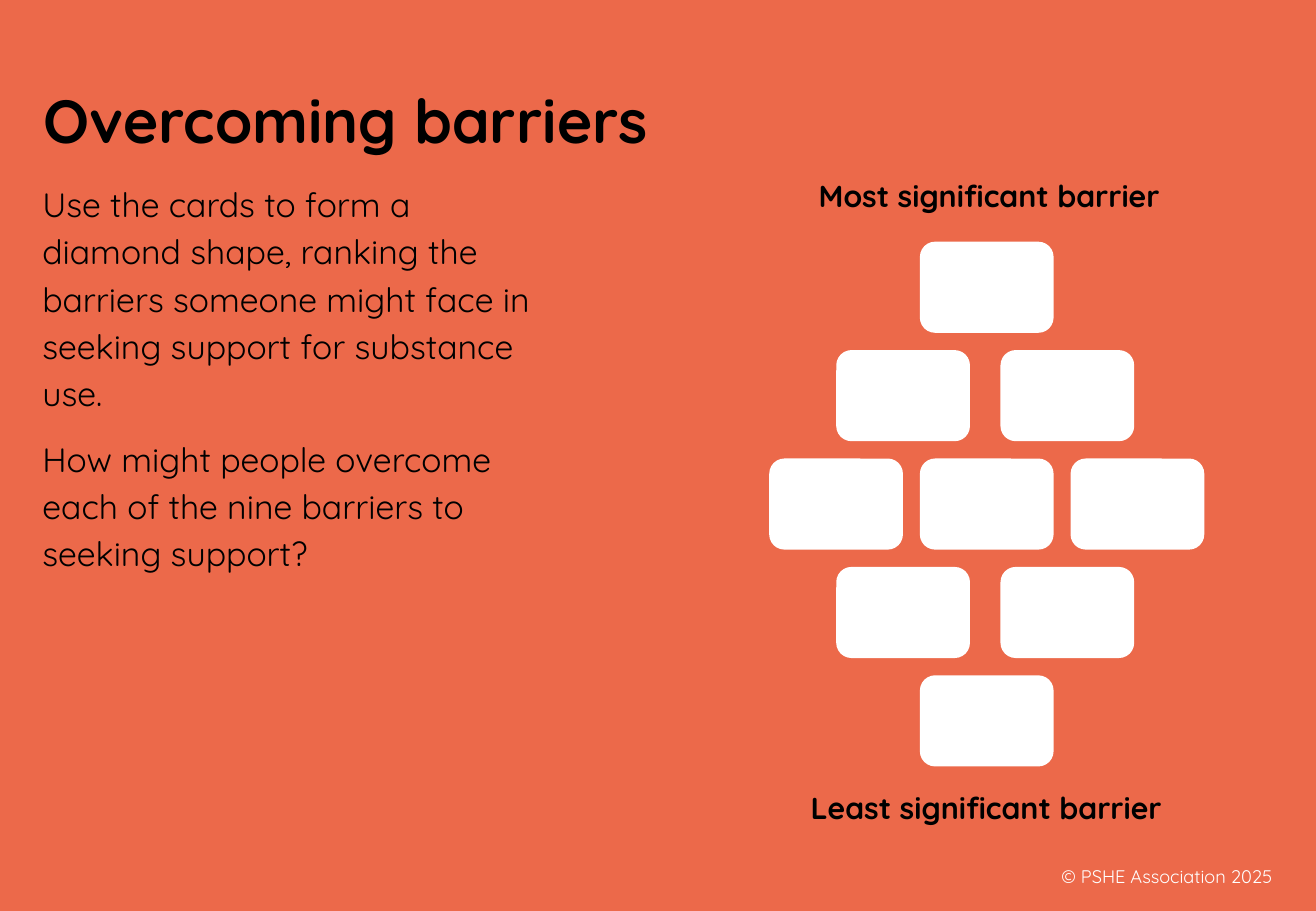
from dataclasses import dataclass

from pptx import Presentation
from pptx.dml.color import RGBColor
from pptx.enum.shapes import MSO_SHAPE
from pptx.enum.text import MSO_ANCHOR, PP_ALIGN
from pptx.slide import Slide
from pptx.util import Inches, Length, Pt

SLIDE_WIDTH = Inches(10.83)
SLIDE_HEIGHT = Inches(7.5)


@dataclass(frozen=True)
class Theme:
    font: str = "Quicksand"
    background: RGBColor = RGBColor(0xEC, 0x69, 0x4A)
    ink: RGBColor = RGBColor(0, 0, 0)
    paper: RGBColor = RGBColor(0xFF, 0xFF, 0xFF)
    title_size: float = 36
    body_size: float = 20
    label_size: float = 18
    footer_size: float = 10.8


@dataclass(frozen=True)
class Area:
    """A rectangle in percent of the slide's width and height."""
    left: float
    top: float
    width: float
    height: float


@dataclass(frozen=True)
class TextBlock:
    area: Area
    paragraphs: tuple[str, ...]
    size: float
    color: RGBColor
    bold: bool = False
    align: PP_ALIGN = PP_ALIGN.LEFT
    anchor: MSO_ANCHOR = MSO_ANCHOR.TOP
    line_points: float | None = None
    gap_points: float = 0


@dataclass(frozen=True)
class CardRow:
    """Cards side by side; step and shift are counted in grid columns."""
    count: int
    step: float = 1
    shift: float = 0


@dataclass(frozen=True)
class DiamondGrid:
    """Measures in percent of the slide's width and height."""
    center: float = 74.98
    top: float = 26.53
    column: float = 11.45
    row: float = 11.9
    card_width: float = 10.16
    card_height: float = 10


THEME = Theme()
GRID = DiamondGrid()
SINGLE = CardRow(1)
PAIR = CardRow(2, step=1.09, shift=-0.01)
DIAMOND = (SINGLE, PAIR, CardRow(3), PAIR, SINGLE)

TEXT_BLOCKS = (
    TextBlock(Area(75.07, 93.47, 22.53, 5.33), ("© PSHE Association 2025",),
              THEME.footer_size, THEME.paper, align=PP_ALIGN.RIGHT,
              anchor=MSO_ANCHOR.MIDDLE),
    TextBlock(Area(2.31, 18.8, 40.35, 66.27),
              ("Use the cards to form a diamond shape, ranking the barriers "
               "someone might face in seeking support for substance use.",
               "How might people overcome each of the nine barriers to "
               "seeking support?"),
              THEME.body_size, THEME.ink, line_points=28, gap_points=11),
    TextBlock(Area(2.4, 5.6, 49.31, 12.13), ("Overcoming barriers",),
              THEME.title_size, THEME.ink, bold=True,
              anchor=MSO_ANCHOR.BOTTOM, line_points=43),
    TextBlock(Area(59.19, 18.8, 31.95, 5.33), ("Most significant barrier",),
              THEME.label_size, THEME.ink, bold=True, align=PP_ALIGN.CENTER),
    TextBlock(Area(59.56, 86, 30.75, 5.33), ("Least significant barrier",),
              THEME.label_size, THEME.ink, bold=True, align=PP_ALIGN.CENTER),
)


def to_lengths(area: Area) -> tuple[Length, Length, Length, Length]:
    return (Length(SLIDE_WIDTH * area.left / 100),
            Length(SLIDE_HEIGHT * area.top / 100),
            Length(SLIDE_WIDTH * area.width / 100),
            Length(SLIDE_HEIGHT * area.height / 100))


def draw_text(slide: Slide, block: TextBlock) -> None:
    frame = slide.shapes.add_textbox(*to_lengths(block.area)).text_frame
    frame.word_wrap = True
    frame.vertical_anchor = block.anchor
    frame.text = "\n".join(block.paragraphs)
    for index, paragraph in enumerate(frame.paragraphs):
        paragraph.alignment = block.align
        if block.line_points:
            paragraph.line_spacing = Pt(block.line_points)
        if index:
            paragraph.space_before = Pt(block.gap_points)
        paragraph.font.name = THEME.font
        paragraph.font.size = Pt(block.size)
        paragraph.font.bold = block.bold
        paragraph.font.color.rgb = block.color


def draw_diamond(slide: Slide, rows: tuple[CardRow, ...]) -> None:
    """Draw the rows of cards as one group, each centred on the grid."""
    diamond = slide.shapes.add_group_shape()
    for row_index, row in enumerate(rows):
        for card_index in range(row.count):
            columns = row.shift + (card_index - (row.count - 1) / 2) * row.step
            area = Area(GRID.center + columns * GRID.column - GRID.card_width / 2,
                        GRID.top + row_index * GRID.row,
                        GRID.card_width, GRID.card_height)
            card = diamond.shapes.add_shape(
                MSO_SHAPE.ROUNDED_RECTANGLE, *to_lengths(area))
            card.shadow.inherit = False
            card.fill.solid()
            card.fill.fore_color.rgb = THEME.paper
            card.line.fill.background()


def main() -> None:
    presentation = Presentation()
    presentation.slide_width = SLIDE_WIDTH
    presentation.slide_height = SLIDE_HEIGHT
    slide = presentation.slides.add_slide(presentation.slide_layouts[6])
    slide.background.fill.solid()
    slide.background.fill.fore_color.rgb = THEME.background
    for block in TEXT_BLOCKS:
        draw_text(slide, block)
    draw_diamond(slide, DIAMOND)
    presentation.save("out.pptx")


if __name__ == "__main__":
    main()
